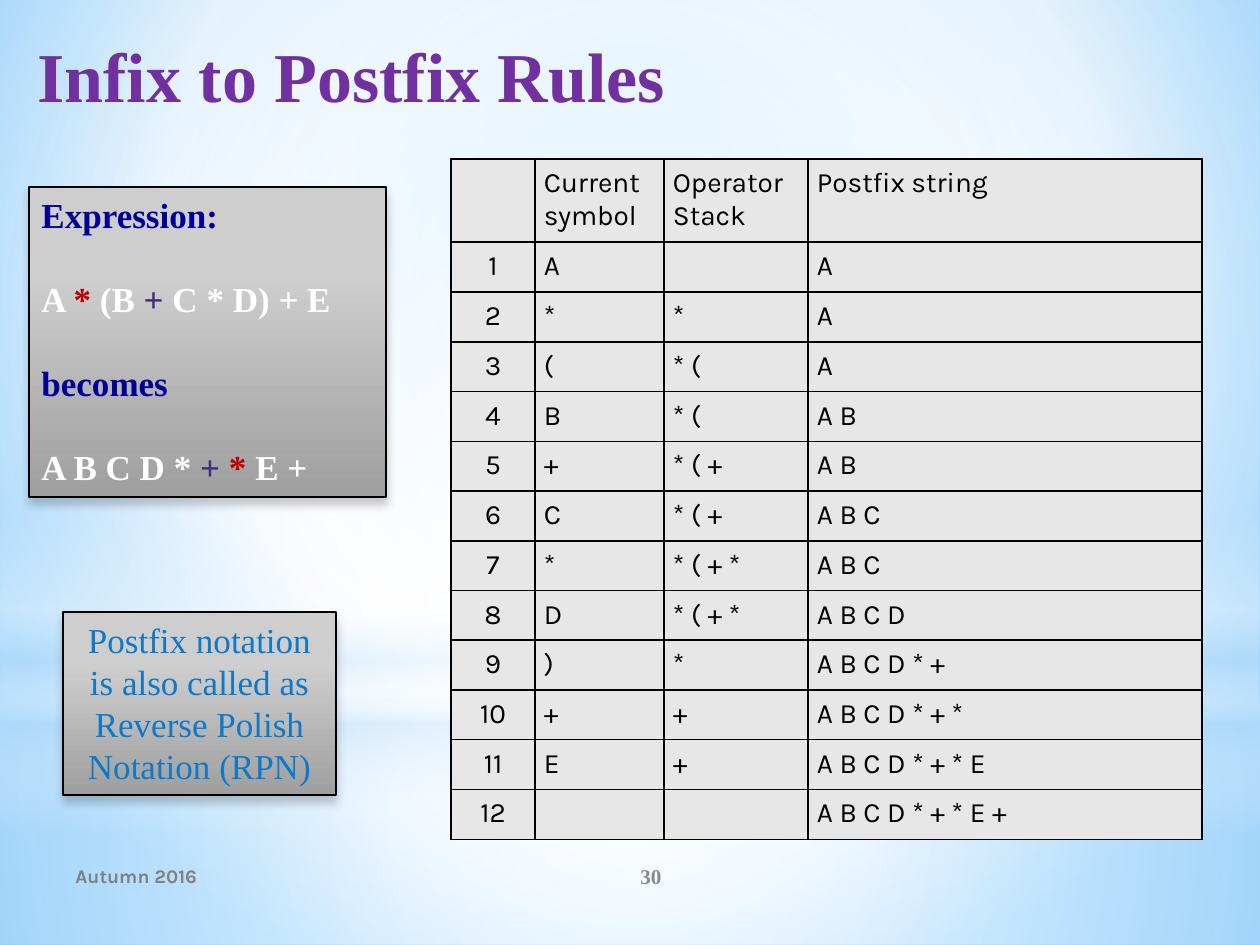
from lxml import etree
from pptx import Presentation
from pptx.dml.color import RGBColor
from pptx.enum.shapes import MSO_SHAPE
from pptx.enum.text import MSO_ANCHOR, PP_ALIGN
from pptx.oxml.ns import qn
from pptx.util import Emu, Pt

RECTANGLE, OVAL = MSO_SHAPE.RECTANGLE, MSO_SHAPE.OVAL
LEFT, CENTER = PP_ALIGN.LEFT, PP_ALIGN.CENTER
TOP, MIDDLE = MSO_ANCHOR.TOP, MSO_ANCHOR.MIDDLE
SERIF, SANS = "Times New Roman", "Karla"
NAVY, WHITE, RED, VIOLET = "000099", "FFFFFF", "C00000", "432D7B"
SKY = "B4DCFA"
MIDPOINT = (50, 50, 50, 50)

COLUMN_WIDTHS = [84, 129, 144, 394]
HEADER_HEIGHT, BODY_HEIGHT = 83, 597
HEADER = ("", "Current symbol", "Operator Stack", "Postfix string")
STEPS = [
    ("A", "", "A"),
    ("*", "*", "A"),
    ("(", "* (", "A"),
    ("B", "* (", "A B"),
    ("+", "* ( +", "A B"),
    ("C", "* ( +", "A B C"),
    ("*", "* ( + *", "A B C"),
    ("D", "* ( + *", "A B C D"),
    (")", "*", "A B C D * +"),
    ("+", "+", "A B C D * + *"),
    ("E", "+", "A B C D * + * E"),
    ("", "", "A B C D * + * E +"),
]
EXPRESSION_LINES = [
    [("Expression:", NAVY)],
    [("A ", WHITE), ("* ", RED), ("(B ", WHITE), ("+ ", VIOLET), ("C * D) + E", WHITE)],
    [("becomes", NAVY)],
    [("A B C D * ", WHITE), ("+ ", VIOLET), ("* ", RED), ("E +", WHITE)],
]


def px(length):
    return Emu(round(length * 914400 / 126))


def color(value):
    return RGBColor.from_string(value)


def add_child(parent, tag, **attributes):
    values = {name: str(value) for name, value in attributes.items()}
    return etree.SubElement(parent, qn(tag), values)


def add_color(parent, value, alpha=100):
    node = add_child(parent, "a:srgbClr", val=value)
    if alpha < 100:
        add_child(node, "a:alpha", val=alpha * 1000)


def gradient(stops, center=None):
    """Radial gradient around center, or a vertical one without it."""
    fill = etree.Element(qn("a:gradFill"), rotWithShape="1")
    stop_list = add_child(fill, "a:gsLst")
    for position, *shade in stops:
        add_color(add_child(stop_list, "a:gs", pos=position * 1000), *shade)
    if center:
        circle = add_child(fill, "a:path", path="circle")
        sides = {side: share * 1000 for side, share in zip("ltrb", center)}
        add_child(circle, "a:fillToRect", **sides)
    else:
        add_child(fill, "a:lin", ang=90 * 60000, scaled=0)
    return fill


def add_gradient_shape(slide, kind, box, stops, center=None):
    shape = slide.shapes.add_shape(kind, *map(px, box))
    shape.shadow.inherit = False
    shape.line.fill.background()
    shape.fill.background()
    properties = shape.element.spPr
    properties.replace(properties.find(qn("a:noFill")), gradient(stops, center))
    return shape


def add_run(paragraph, text, size, font, shade, bold=False):
    run = paragraph.add_run()
    run.text = text
    run.font.size, run.font.name, run.font.bold = Pt(size), font, bold
    run.font.color.rgb = color(shade)


def add_background(slide):
    slide.background.fill.solid()
    properties = slide.element.find(".//" + qn("p:bgPr"))
    stops = [(0, "9ED5FF"), (60, WHITE), (100, "5BB9FF")]
    properties.replace(properties[0], gradient(stops, (20, 10, 20, 60)))

    # Translucent light over the backdrop
    add_gradient_shape(slide, RECTANGLE, (0, 703, 1260, 242),
                       [(0, WHITE, 91), (37, WHITE, 76), (100, SKY, 79)], MIDPOINT)
    add_gradient_shape(slide, RECTANGLE, (0, 0, 1260, 703),
                       [(0, WHITE, 89), (48, WHITE, 62), (100, SKY, 79)], MIDPOINT)
    add_gradient_shape(slide, RECTANGLE, (0, 519, 1260, 315),
                       [(0, WHITE, 0), (29, WHITE, 30), (45, SKY, 40),
                        (55, WHITE, 26), (65, SKY, 60), (100, WHITE, 0)])
    add_gradient_shape(slide, OVAL, (0, 220, 1260, 703),
                       [(0, WHITE), (56, WHITE, 0)], MIDPOINT)


def fill_cell(cell, text, alignment):
    cell.margin_left = cell.margin_right = px(9)
    cell.margin_top = cell.margin_bottom = px(8)
    properties = cell._tc.get_or_add_tcPr()
    for side in "LRTB":
        border = add_child(properties, f"a:ln{side}", w=Pt(1))
        add_color(add_child(border, "a:solidFill"), "000000")
    cell.fill.solid()
    cell.fill.fore_color.rgb = color("E7E7E7")
    paragraph = cell.text_frame.paragraphs[0]
    paragraph.alignment = alignment
    if text:
        add_run(paragraph, text, 16, SANS, "000000")
    else:
        add_child(paragraph._p, "a:endParaRPr", sz=1600)


def add_steps_table(slide):
    rows = [HEADER] + [(str(number), *step) for number, step in enumerate(STEPS, 1)]
    frame = slide.shapes.add_table(
        len(rows), len(HEADER), px(451), px(159),
        px(sum(COLUMN_WIDTHS)), px(HEADER_HEIGHT + BODY_HEIGHT))
    table = frame.table
    table.first_row = table.horz_banding = False
    for column, width in zip(table.columns, COLUMN_WIDTHS):
        column.width = px(width)
    for index, values in enumerate(rows):
        height = BODY_HEIGHT / len(STEPS) if index else HEADER_HEIGHT
        table.rows[index].height = px(height)
        for position, text in enumerate(values):
            fill_cell(table.cell(index, position), text, LEFT if position else CENTER)


def add_panel(slide, box, lines, alignment, bold=False):
    """Grey panel with a soft shadow and one paragraph for each line."""
    panel = add_gradient_shape(slide, RECTANGLE, box, [(28, "CECECE"), (100, "9F9F9F")])
    panel.line.color.rgb = color("000000")
    panel.line.width = Pt(0.75)
    effects = panel.element.spPr.find(qn("a:effectLst"))
    shadow = add_child(effects, "a:outerShdw", blurRad=Pt(5), dist=Pt(4),
                       dir=90 * 60000, rotWithShape=0)
    add_color(shadow, "000000", 20)
    frame = panel.text_frame
    frame.word_wrap = True
    frame.vertical_anchor = TOP
    for index, runs in enumerate(lines):
        paragraph = frame.add_paragraph() if index else frame.paragraphs[0]
        paragraph.alignment = alignment
        paragraph.line_spacing = Pt(24)
        paragraph.space_before = Pt(24 if index else 0)
        for text, shade in runs:
            add_run(paragraph, text, 20, SERIF, shade, bold)


def add_footer(slide, box, text, size, font, shade, alignment):
    frame = slide.shapes.add_textbox(*map(px, box)).text_frame
    frame.word_wrap = True
    frame.vertical_anchor = MIDDLE
    frame.paragraphs[0].alignment = alignment
    add_run(frame.paragraphs[0], text, size, font, shade, bold=True)


def set_title(slide, text):
    title = slide.shapes.title
    title.left, title.top, title.width, title.height = map(px, (25, 26, 1201, 158))
    title.text_frame.vertical_anchor = TOP
    paragraph = title.text_frame.paragraphs[0]
    paragraph.alignment = LEFT
    add_run(paragraph, text, 40, SERIF, "7030A0", bold=True)
    # Bring the title in front of the backdrop
    title.element.getparent().append(title.element)


def main():
    presentation = Presentation()
    presentation.slide_width, presentation.slide_height = px(1260), px(945)
    slide = presentation.slides.add_slide(presentation.slide_layouts[5])
    add_background(slide)
    add_steps_table(slide)
    add_panel(slide, (29, 187, 357, 310), EXPRESSION_LINES, LEFT, bold=True)
    note = "Postfix notation is also called as Reverse Polish Notation (RPN)"
    add_panel(slide, (63, 612, 273, 183), [[(note, "0D79CA")]], CENTER)
    add_footer(slide, (525, 851, 252, 50), "30", 12, SERIF, "898989", CENTER)
    add_footer(slide, (63, 851, 462, 50), "Autumn 2016", 11, SANS, "808080", LEFT)
    set_title(slide, "Infix to Postfix Rules")
    presentation.save("out.pptx")


if __name__ == "__main__":
    main()
